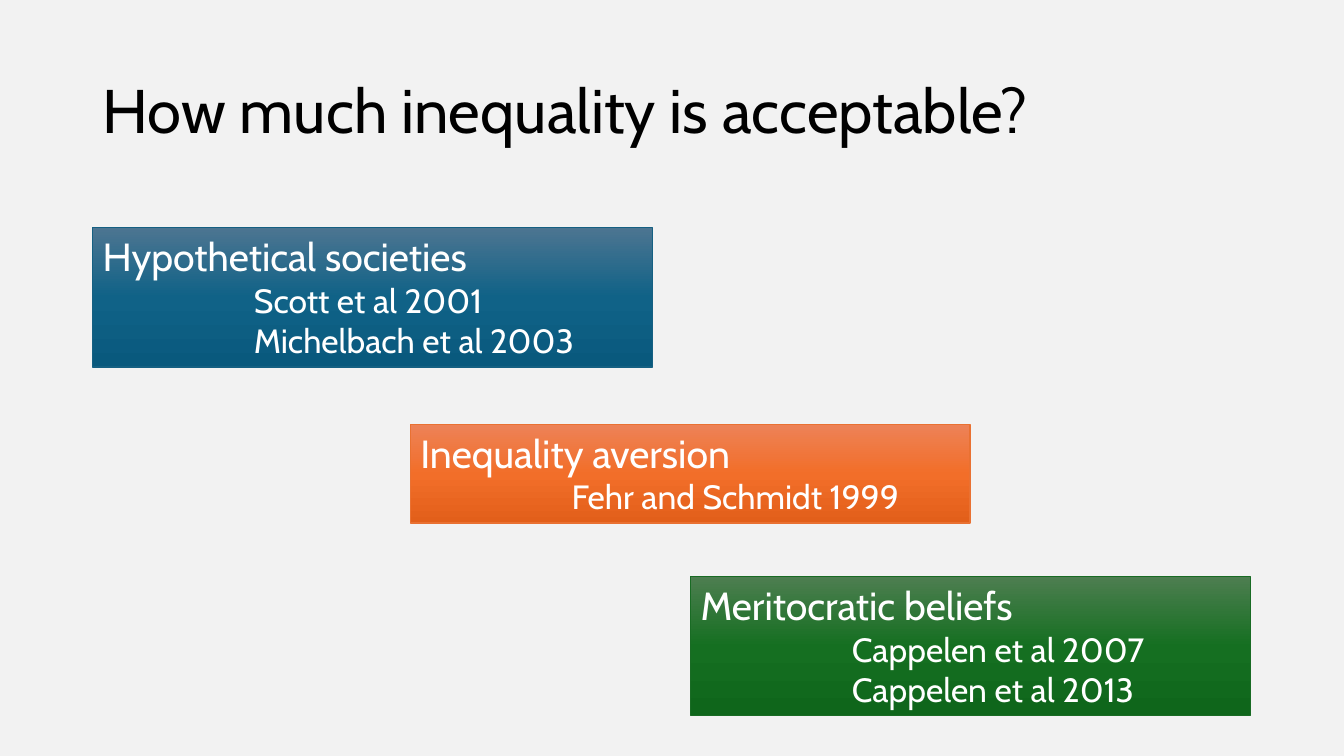
"""Build a slide with three stepped topic boxes on acceptable inequality."""
import copy

import pptx
import pptx.dml.color
import pptx.enum.shapes
import pptx.enum.text
import pptx.oxml.ns
import pptx.util

Inches = pptx.util.Inches
RGBColor = pptx.dml.color.RGBColor

BACKGROUND = RGBColor(0xF2, 0xF2, 0xF2)
BLACK = RGBColor(0, 0, 0)
WHITE = RGBColor(0xFF, 0xFF, 0xFF)
BLUES = [RGBColor.from_string(code) for code in ("4C7591", "106287", "09597D")]
BLUE_LINE = RGBColor(0x15, 0x60, 0x82)
ORANGES = [RGBColor.from_string(code) for code in ("ED8257", "F26E29", "E25F1A")]
ORANGE_LINE = RGBColor(0xE9, 0x71, 0x32)
GREENS = [RGBColor.from_string(code) for code in ("4D7E50", "156F21", "0F661B")]
GREEN_LINE = RGBColor(0x19, 0x6B, 0x24)

TOPICS = [
    ("Hypothetical societies", ["Scott et al 2001", "Michelbach et al 2003"],
     0.92, 2.26, 1.38, BLUES, BLUE_LINE),
    ("Inequality aversion", ["Fehr and Schmidt 1999"],
     4.07, 4.21, 0.98, ORANGES, ORANGE_LINE),
    ("Meritocratic beliefs", ["Cappelen et al 2007", "Cappelen et al 2013"],
     6.85, 5.72, 1.38, GREENS, GREEN_LINE),
]


def write(para, text, size, color=WHITE, indent=0.0, level=0, spacing=1.0):
    """Fill a left-aligned paragraph with one formatted span."""
    para.alignment = pptx.enum.text.PP_ALIGN.LEFT
    para.level = level
    para.line_spacing = spacing
    properties = para._p.get_or_add_pPr()
    properties.set("marL", str(Inches(indent)))
    properties.set("indent", "0")
    span = para.add_run()
    span.text = text
    span.font.name = "Cabin"
    span.font.size = pptx.util.Pt(size)
    span.font.color.rgb = color


deck = pptx.Presentation()
deck.slide_width = Inches(13.33)
deck.slide_height = Inches(7.5)
page = deck.slides.add_slide(deck.slide_layouts[6])
page.background.fill.solid()
page.background.fill.fore_color.rgb = BACKGROUND

title = page.shapes.add_textbox(Inches(0.92), Inches(0.4), Inches(11.5), Inches(1.45))
title.text_frame.word_wrap = True
title.text_frame.vertical_anchor = pptx.enum.text.MSO_ANCHOR.MIDDLE
write(title.text_frame.paragraphs[0], "How much inequality is acceptable?", 44,
      color=BLACK, spacing=0.9)

for heading, studies, left, top, height, shades, outline in TOPICS:
    box = page.shapes.add_shape(
        pptx.enum.shapes.MSO_SHAPE.RECTANGLE,
        Inches(left), Inches(top), Inches(5.55), Inches(height))
    box.shadow.inherit = False
    box.line.color.rgb = outline
    box.line.width = pptx.util.Pt(1)

    box.fill.gradient()
    box.fill.gradient_angle = 270
    stop_list = box._element.spPr.find(".//" + pptx.oxml.ns.qn("a:gsLst"))
    stop_list.insert(1, copy.deepcopy(stop_list[0]))
    for stop, position, shade in zip(box.fill.gradient_stops, (0, 0.5, 1), shades):
        stop.position = position
        stop.color.rgb = shade

    frame = box.text_frame
    frame.word_wrap = True
    frame.auto_size = pptx.enum.text.MSO_AUTO_SIZE.SHAPE_TO_FIT_TEXT
    frame.vertical_anchor = pptx.enum.text.MSO_ANCHOR.TOP
    write(frame.paragraphs[0], heading, 28)
    for study in studies:
        write(frame.add_paragraph(), study, 24, indent=1.5, level=1)

deck.save("out.pptx")
